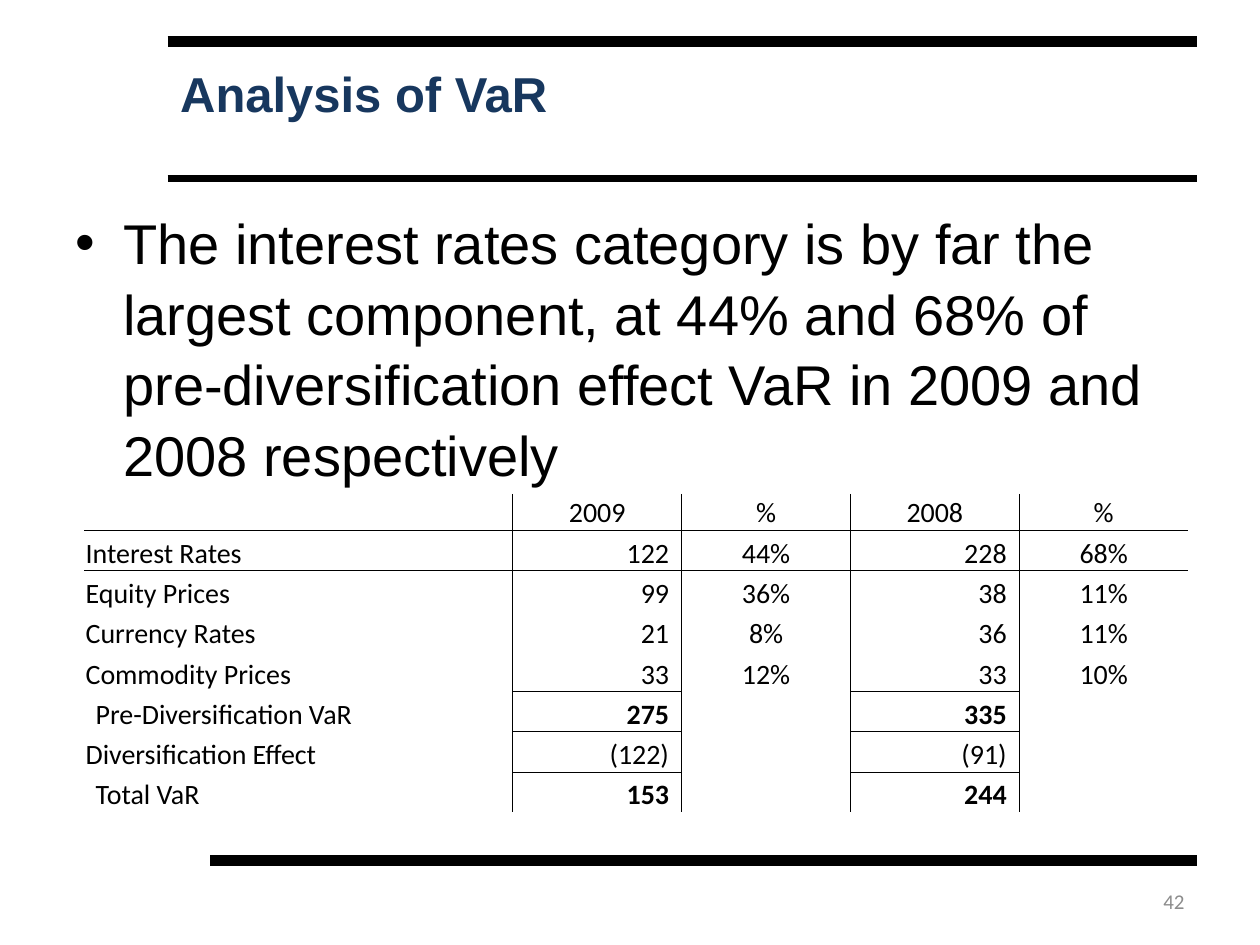
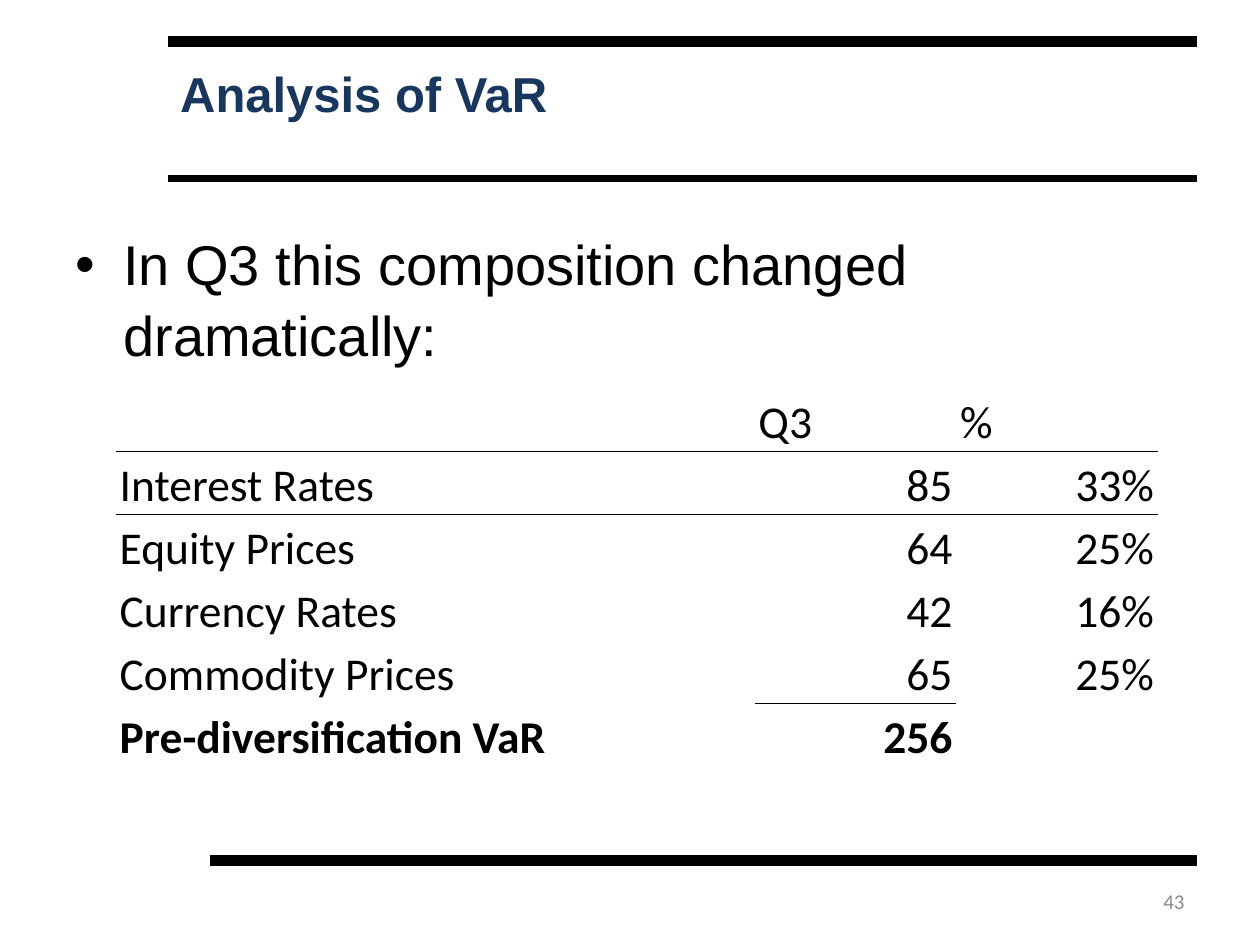
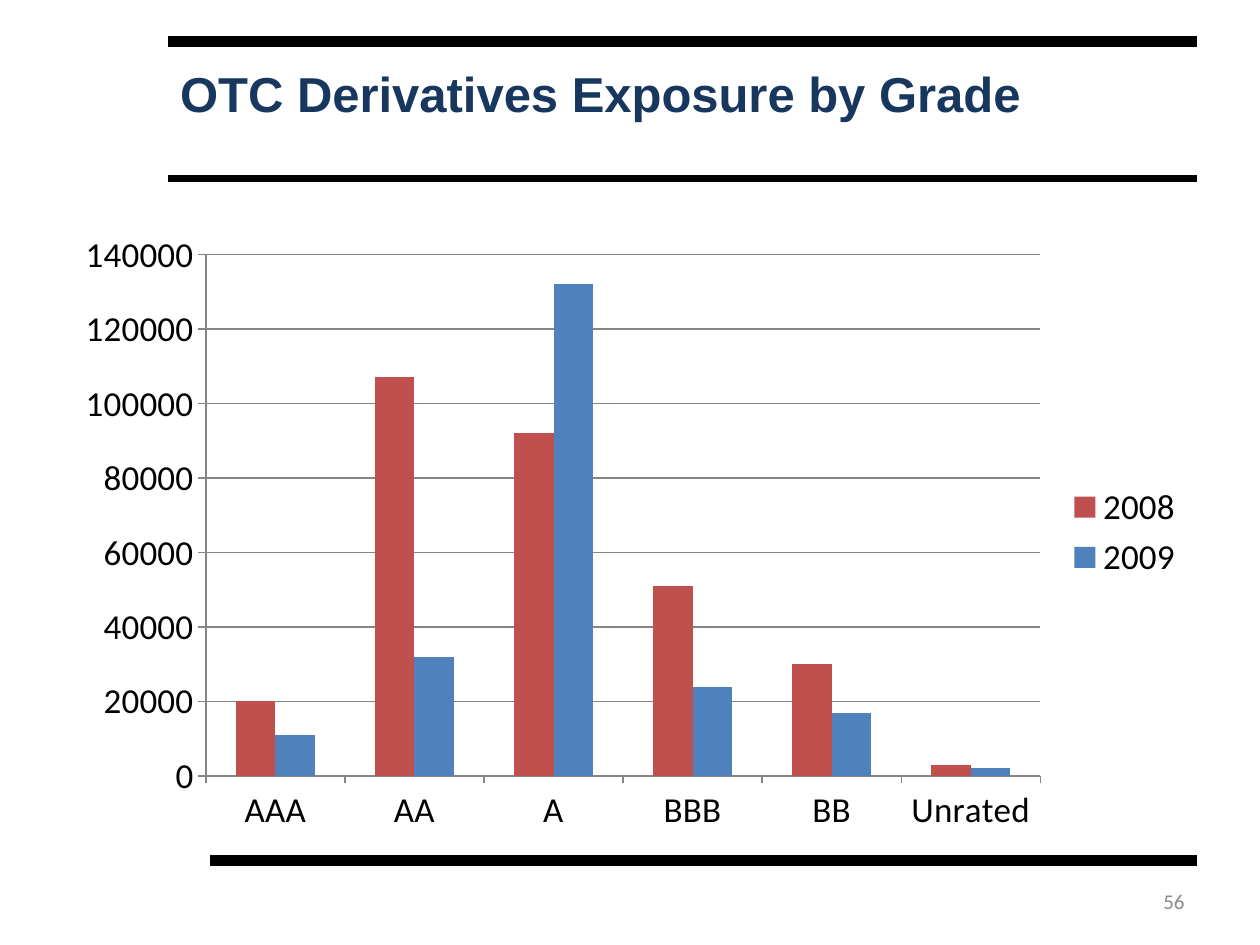
from lxml.etree import SubElement
from pptx import Presentation
from pptx.chart.data import CategoryChartData
from pptx.dml.color import RGBColor
from pptx.enum.chart import XL_CHART_TYPE as ChartType, XL_LEGEND_POSITION as LegendPosition
from pptx.enum.chart import XL_TICK_MARK as TickMark
from pptx.enum.shapes import MSO_CONNECTOR as Connector
from pptx.enum.text import MSO_ANCHOR as Anchor, PP_ALIGN as Align
from pptx.oxml.ns import qn
from pptx.util import Inches, Pt

BLACK = RGBColor(0x00, 0x00, 0x00)
NAVY = RGBColor(0x17, 0x37, 0x5E)
GREY = RGBColor(0x8C, 0x8C, 0x8C)
AXIS_GREY = RGBColor(0x86, 0x86, 0x86)
RED = RGBColor(0xC0, 0x50, 0x4D)
BLUE = RGBColor(0x4F, 0x81, 0xBD)

TITLE_FONT = {"name": "Arial", "size": Pt(28), "bold": True}
BODY_FONT = {"name": "Arial", "size": Pt(32), "bold": False}
NUMBER_FONT = {"name": "Calibri", "size": Pt(12), "bold": False}
CHART_FONT = {"name": "Calibri", "size": Pt(20), "bold": False}

# left, right, height on the page, weight
BARS = [(1.33, 9.5, 0.33, 6.5), (1.67, 9.5, 6.83, 6.5), (1.33, 9.5, 1.42, 4)]
PLAIN_TABLE_STYLE = "{2D5ABB26-0587-4C30-8999-92F81FD0307C}"
LEFT, CENTER, RIGHT = Align.LEFT, Align.CENTER, Align.RIGHT


def format_font(font, values, color):
    for name, value in values.items():
        setattr(font, name, value)
    font.color.rgb = color


def add_page(title, number):
    page = deck.slides.add_slide(deck.slide_layouts[5])
    for left, right, height, weight in BARS:
        bar = page.shapes.add_connector(
            Connector.STRAIGHT, Inches(left), Inches(height), Inches(right), Inches(height))
        bar.line.color.rgb = BLACK
        bar.line.width = Pt(weight)
        SubElement(bar._element.spPr, qn("a:effectLst"))

    heading = page.shapes.title
    heading.left, heading.top = Inches(1.33), Inches(0.45)
    heading.width, heading.height = Inches(8.17), Inches(0.8)
    footer = page.shapes.add_textbox(Inches(7.17), Inches(6.95), Inches(2.33), Inches(0.4))
    for box, text, anchor, align, values, color in (
            (heading, title, Anchor.TOP, LEFT, TITLE_FONT, NAVY),
            (footer, number, Anchor.MIDDLE, RIGHT, NUMBER_FONT, GREY)):
        box.text_frame.word_wrap = True
        box.text_frame.vertical_anchor = anchor
        para = box.text_frame.paragraphs[0]
        para.alignment = align
        span = para.add_run()
        span.text = text
        format_font(span.font, values, color)
    return page


deck = Presentation()
deck.slide_width, deck.slide_height = Inches(10), Inches(7.5)

# Table slides: "ruled" lists cells with a line below, "uprights" columns with a line at left
table_pages = [
    {
        "number": "42",
        "bullet": "The interest rates category is by far the largest component, at 44% and 68% "
                  "of pre-diversification effect VaR in 2009 and 2008 respectively",
        "bullet_top": 1.58, "bullet_height": 2.25,
        "at": (0.67, 3.92), "columns": [3.4] + [1.34] * 4, "heights": [0.29] + [0.32] * 7,
        "size": 16, "inset": 0.01, "number_inset": 0.1,
        "header_align": CENTER, "aligns": [LEFT, RIGHT, CENTER, RIGHT, CENTER],
        "uprights": {1, 3},
        "ruled": {(0, col) for col in range(5)} | {(row, col) for row in (4, 6) for col in (1, 3)},
        "bold": {(row, col) for row in (5, 7) for col in (1, 3)},
        "indented": {5, 7},
        "rows": [
            ["", "2009", "%", "2008", "%"],
            ["Interest Rates", "122", "44%", "228", "68%"],
            ["Equity Prices", "99", "36%", "38", "11%"],
            ["Currency Rates", "21", "8%", "36", "11%"],
            ["Commodity Prices", "33", "12%", "33", "10%"],
            ["Pre-Diversification VaR", "275", "", "335", ""],
            ["Diversification Effect", "(122)", "", "(91)", ""],
            ["Total VaR", "153", "", "244", ""],
        ],
    },
    {
        "number": "43",
        "bullet": "In Q3 this composition changed dramatically:",
        "bullet_top": 1.75, "bullet_height": 1.33,
        "at": (0.92, 3.08), "columns": [5.07, 1.6, 1.6], "heights": [0.5] * 6,
        "size": 26, "inset": 0.03, "number_inset": 0.03,
        "header_align": LEFT, "aligns": [LEFT, RIGHT, RIGHT],
        "uprights": set(),
        "ruled": {(0, col) for col in range(3)} | {(4, 1)},
        "bold": {(5, 0), (5, 1)},
        "indented": set(),
        "rows": [
            ["", "Q3", "%"],
            ["Interest Rates", "85", "33%"],
            ["Equity Prices", "64", "25%"],
            ["Currency Rates", "42", "16%"],
            ["Commodity Prices", "65", "25%"],
            ["Pre-diversification VaR", "256", ""],
        ],
    },
]

for content in table_pages:
    page = add_page("Analysis of VaR", content["number"])

    # Bullet
    box = page.shapes.add_textbox(
        Inches(0.5), Inches(content["bullet_top"]), Inches(9), Inches(content["bullet_height"]))
    box.text_frame.word_wrap = True
    para = box.text_frame.paragraphs[0]
    para.line_spacing = 1.05
    properties = para._p.get_or_add_pPr()
    properties.set("marL", str(Inches(0.38)))
    properties.set("indent", str(-Inches(0.38)))
    SubElement(properties, qn("a:buFont"), typeface="Arial")
    SubElement(properties, qn("a:buChar"), char="•")
    span = para.add_run()
    span.text = content["bullet"]
    format_font(span.font, BODY_FONT, BLACK)

    # Table
    rows, columns, heights = content["rows"], content["columns"], content["heights"]
    left, top = content["at"]
    table = page.shapes.add_table(
        len(rows), len(columns), Inches(left), Inches(top),
        Inches(sum(columns)), Inches(sum(heights))).table
    table.first_row = table.horz_banding = False
    table._tbl.tblPr.find(qn("a:tableStyleId")).text = PLAIN_TABLE_STYLE
    for column, width in zip(table.columns, columns):
        column.width = Inches(width)
    for line, height in zip(table.rows, heights):
        line.height = Inches(height)

    for row, texts in enumerate(rows):
        for col, text in enumerate(texts):
            cell = table.cell(row, col)
            align = content["aligns"][col] if row else content["header_align"]
            indented = col == 0 and row in content["indented"]
            cell.vertical_anchor = Anchor.BOTTOM
            cell.margin_left = Inches(0.09 if indented else content["inset"])
            cell.margin_right = Inches(content["number_inset" if align == RIGHT else "inset"])
            cell.margin_top, cell.margin_bottom = Inches(content["inset"]), 0

            para = cell.text_frame.paragraphs[0]
            para.alignment = align
            if text:
                span = para.add_run()
                span.text = text
                values = {"name": "Calibri", "size": Pt(content["size"]),
                          "bold": (row, col) in content["bold"]}
                format_font(span.font, values, BLACK)
            else:
                SubElement(para._p, qn("a:endParaRPr"), sz=str(content["size"] * 100))

            edges = {
                "a:lnL": col in content["uprights"],
                "a:lnR": col + 1 in content["uprights"],
                "a:lnT": (row - 1, col) in content["ruled"],
                "a:lnB": (row, col) in content["ruled"],
            }
            for edge, drawn in edges.items():
                if drawn:
                    border = SubElement(cell._tc.get_or_add_tcPr(), qn(edge), w=str(Pt(0.5)))
                    fill = SubElement(border, qn("a:solidFill"))
                    SubElement(fill, qn("a:srgbClr"), val=str(BLACK))
            cell.fill.background()

# Chart slide
page = add_page("OTC Derivatives Exposure by Grade", "56")
exposure = CategoryChartData()
exposure.categories = ["AAA", "AA", "A", "BBB", "BB", "Unrated"]
exposure.add_series("2008", [20000, 107000, 92000, 51000, 30000, 3000])
exposure.add_series("2009", [11000, 32000, 132000, 24000, 17000, 2000])
chart = page.shapes.add_chart(
    ChartType.COLUMN_CLUSTERED, Inches(0.5), Inches(1.75), Inches(9), Inches(4.95), exposure).chart
format_font(chart.font, CHART_FONT, BLACK)
chart.has_title = False
chart.has_legend = True
chart.legend.position = LegendPosition.RIGHT
chart.legend.include_in_layout = False

plot = chart.plots[0]
plot.vary_by_categories = False
plot.gap_width, plot.overlap = 150, 0
for series, color in zip(plot.series, (RED, BLUE)):
    series.format.fill.solid()
    series.format.fill.fore_color.rgb = color

grades, amounts = chart.category_axis, chart.value_axis
amounts.minimum_scale, amounts.maximum_scale, amounts.major_unit = 0, 140000, 20000
amounts.has_major_gridlines = True
for axis in (grades, amounts):
    axis.major_tick_mark = TickMark.OUTSIDE
for part in (grades, amounts, amounts.major_gridlines):
    part.format.line.color.rgb = AXIS_GREY
    part.format.line.width = Pt(0.75)

deck.save("out.pptx")
